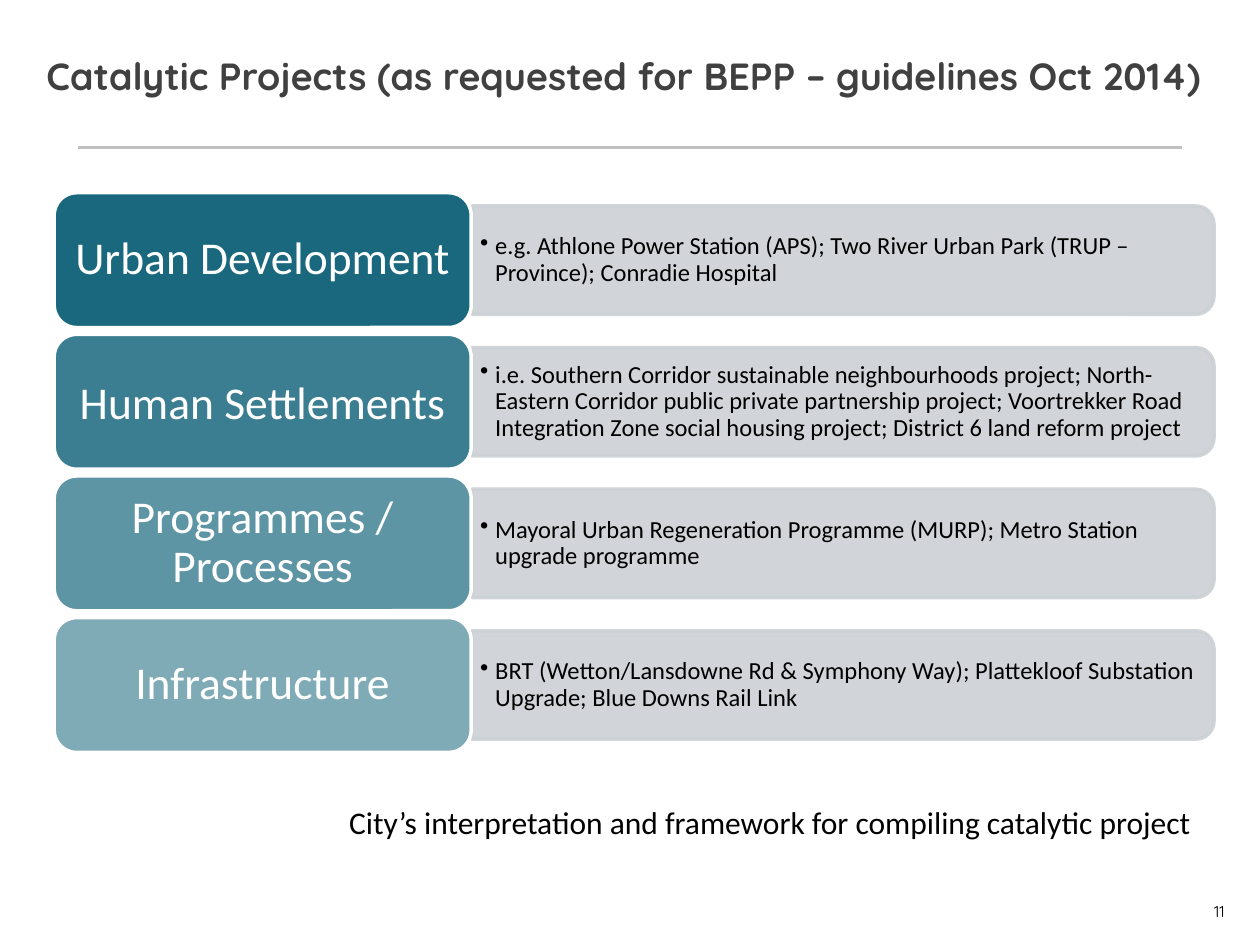
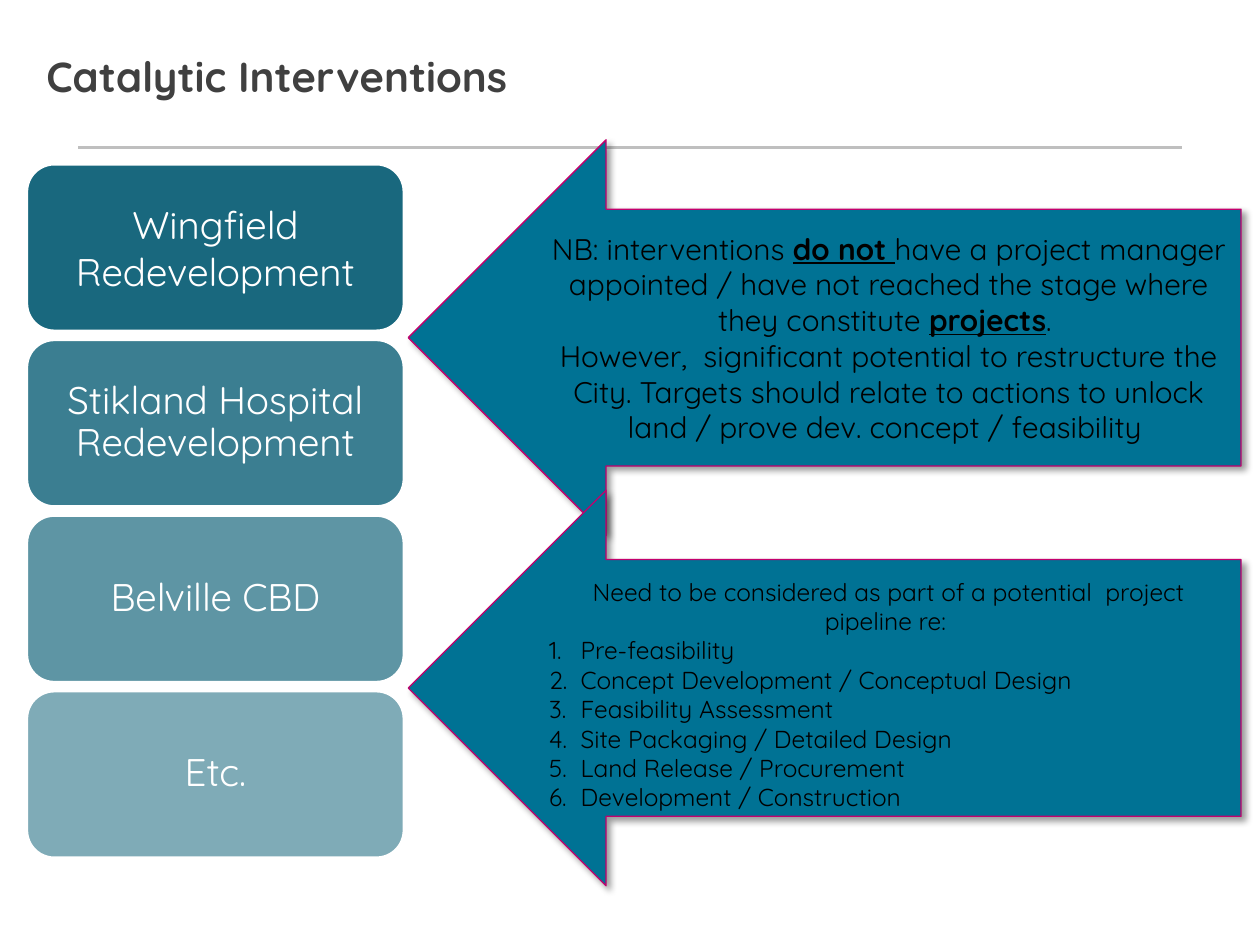
from lxml.etree import SubElement
from pptx import Presentation
from pptx.dml.color import RGBColor
from pptx.enum.shapes import MSO_CONNECTOR, MSO_SHAPE
from pptx.enum.text import MSO_ANCHOR, PP_ALIGN
from pptx.oxml.ns import qn
from pptx.util import Inches, Pt

HEADING_FONT = "Quicksand"
BODY_FONT = "Calibri"
TEAL, ARROW_TEAL, MAGENTA = "005870", "007294", "C4006D"
GREY, RULE_GREY, TITLE_GREY = "CCD1D5", "BFBFBF", "404040"
BLACK, WHITE = "000000", "FFFFFF"
FADES = [90, 77, 63, 50]


def paint(shape, fill, line, width, fill_alpha=100, line_alpha=100):
    """Fill and outline a shape, with opacity in percent."""
    shape.shadow.inherit = False
    shape.fill.solid()
    shape.fill.fore_color.rgb = RGBColor.from_string(fill)
    shape.line.color.rgb = RGBColor.from_string(line)
    shape.line.width = Pt(width)
    colours = shape._element.spPr.iter(qn("a:srgbClr"))
    for colour, alpha in zip(list(colours), (fill_alpha, line_alpha)):
        if alpha < 100:
            SubElement(colour, qn("a:alpha"), val=str(alpha * 1000))


def write(shape, text, font, size, colour, align=PP_ALIGN.CENTER,
          insets=(0.1, 0.05, 0.1, 0.05), spacing=None):
    """Set a shape's text, vertically centred, in one style."""
    frame = shape.text_frame
    frame.text = text
    frame.word_wrap = True
    frame.vertical_anchor = MSO_ANCHOR.MIDDLE
    (frame.margin_left, frame.margin_top,
     frame.margin_right, frame.margin_bottom) = map(Inches, insets)
    for paragraph in frame.paragraphs:
        paragraph.alignment = align
        paragraph.line_spacing = spacing
        for run in paragraph.runs:
            run.font.name = font
            run.font.size = Pt(size)
            run.font.color.rgb = RGBColor.from_string(colour)
    return frame


prs = Presentation()
prs.slide_width, prs.slide_height = Inches(10), Inches(7.5)

# Rule and title on both slides
titles = [
    ("Catalytic Projects (as requested for BEPP – guidelines Oct 2014)", 21.6),
    ("Catalytic Interventions", 24),
]
for title, size in titles:
    slide = prs.slides.add_slide(prs.slide_layouts[6])
    rule = slide.shapes.add_connector(
        MSO_CONNECTOR.STRAIGHT, Inches(0.62), Inches(1.17), Inches(9.38), Inches(1.17))
    rule.line.color.rgb = RGBColor.from_string(RULE_GREY)
    rule.line.width = Pt(2)
    SubElement(rule._element.spPr, qn("a:effectLst"))
    heading = slide.shapes.add_textbox(Inches(0.27), Inches(0.22), Inches(9.64), Inches(0.76))
    frame = write(heading, title, HEADING_FONT, size, TITLE_GREY, PP_ALIGN.LEFT)
    frame.paragraphs[0].runs[0].font.bold = True
projects, interventions = prs.slides

# Slide 1: project categories with their examples
categories = [
    ("Urban Development", 0.9,
     "e.g. Athlone Power Station (APS); Two River Urban Park (TRUP – Province); "
     "Conradie Hospital"),
    ("Human Settlements", 1.0,
     "i.e. Southern Corridor sustainable neighbourhoods project; North-Eastern Corridor "
     "public private partnership project; Voortrekker Road Integration Zone social housing "
     "project; District 6 land reform project"),
    ("Programmes / Processes", 0.9,
     "Mayoral Urban Regeneration Programme (MURP); Metro Station upgrade programme"),
    ("Infrastructure", 0.9,
     "BRT (Wetton/Lansdowne Rd & Symphony Way); Plattekloof Substation Upgrade; "
     "Blue Downs Rail Link"),
]
bar_length, bar_height, row_pitch = 5.89, 0.86, 1.124
for row, ((category, spacing, examples), fade) in enumerate(zip(categories, FADES)):
    top = 1.53 + row * row_pitch
    middle = top + 1.07 / 2

    # Turned a quarter so that its rounded corners face right
    bar = projects.shapes.add_shape(
        MSO_SHAPE.ROUND_2_SAME_RECTANGLE, Inches(6.26), Inches(middle - bar_length / 2),
        Inches(bar_height), Inches(bar_length))
    bar.rotation = 90
    paint(bar, GREY, GREY, 2, 90, 90)

    example_box = projects.shapes.add_textbox(
        Inches(3.75), Inches(middle - 0.385), Inches(5.85), Inches(0.77))
    frame = write(example_box, examples, BODY_FONT, 14, BLACK, PP_ALIGN.LEFT,
                  (0.06, 0.03, 0.06, 0.03), 0.9)
    properties = frame.paragraphs[0]._p.get_or_add_pPr()
    properties.set("marL", str(Inches(0.12)))
    properties.set("indent", str(Inches(-0.12)))
    SubElement(properties, qn("a:buChar"), char="•")

    category_box = projects.shapes.add_shape(
        MSO_SHAPE.ROUNDED_RECTANGLE, Inches(0.43), Inches(top), Inches(3.31), Inches(1.07))
    paint(category_box, TEAL, WHITE, 2, fade)
    write(category_box, category, BODY_FONT, 26, WHITE,
          insets=(0.11, 0.05, 0.11, 0.05), spacing=spacing)

# Slide 1: caption and page number
caption = projects.shapes.add_textbox(Inches(2.55), Inches(6.32), Inches(7.18), Inches(0.4))
write(caption, "City’s interpretation and framework for compiling catalytic project ",
      BODY_FONT, 18, BLACK)
page_number = projects.shapes.add_textbox(Inches(9.16), Inches(7.07), Inches(0.56), Inches(0.25))
write(page_number, "11", HEADING_FONT, 9, BLACK, PP_ALIGN.RIGHT, (0.08, 0.08, 0, 0))

# Slide 2: intervention sites
sites = [("Wingfield Redevelopment", 1.0), ("Stikland Hospital Redevelopment", 0.9),
         ("Belville CBD", 0.9), ("Etc.", 0.9)]
for row, ((site, spacing), fade) in enumerate(zip(sites, FADES)):
    site_box = interventions.shapes.add_shape(
        MSO_SHAPE.ROUNDED_RECTANGLE, Inches(0.21), Inches(1.3 + row * 1.394),
        Inches(3), Inches(1.33))
    paint(site_box, TEAL, WHITE, 2, fade)
    write(site_box, site, HEADING_FONT, 22, WHITE,
          insets=(0.09, 0.05, 0.09, 0.05), spacing=spacing)

# Slide 2: arrows with notes
stages = ["Pre-feasibility", "Concept Development / Conceptual Design",
          "Feasibility Assessment", "Site Packaging / Detailed Design",
          "Land Release / Procurement", "Development / Construction"]
status_parts = [
    "NB: interventions ", "do not ",
    "have a project manager appointed / have not reached the stage where they constitute ",
    "projects", ". "]
potential = ("However,  significant potential to restructure the City. Targets should relate "
             "to actions to unlock land / prove dev. concept / feasibility ")
pipeline = "Need to be considered as part of a potential  project pipeline re: "
notes = [
    (1.11, "\n".join(["", potential]), 17, (0.1, 0.05, 0.1, 0.05)),
    (3.89, "\n".join([pipeline] + stages), 14, (0.1, 0.1, 0.1, 0)),
]
note_frames = []
for top, note, size, insets in notes:
    arrow = interventions.shapes.add_shape(
        MSO_SHAPE.LEFT_ARROW, Inches(3.24), Inches(top), Inches(6.61), Inches(3.14))
    arrow.adjustments[0], arrow.adjustments[1] = 0.649, 0.5
    paint(arrow, ARROW_TEAL, MAGENTA, 0.75)
    effects = arrow._element.spPr.find(qn("a:effectLst"))
    shadow = SubElement(effects, qn("a:outerShdw"), blurRad=str(Pt(4)), dist=str(Pt(3)),
                        dir=str(45 * 60000), algn="tl", rotWithShape="0")
    shadow_colour = SubElement(shadow, qn("a:srgbClr"), val=BLACK)
    SubElement(shadow_colour, qn("a:alpha"), val="40000")
    note_frames.append(write(arrow, note, HEADING_FONT, size, BLACK, insets=insets))
status_frame, pipeline_frame = note_frames

# Emphasised words in the upper note
for part in status_parts:
    run = status_frame.paragraphs[0].add_run()
    run.text = part
    run.font.name = HEADING_FONT
    run.font.size = Pt(17)
    run.font.color.rgb = RGBColor.from_string(BLACK)
    run.font.bold = run.font.underline = part in ("do not ", "projects")

# Numbered stages in the lower note
for paragraph in pipeline_frame.paragraphs[1:]:
    paragraph.alignment = PP_ALIGN.LEFT
    properties = paragraph._p.get_or_add_pPr()
    properties.set("marL", str(Inches(0.25)))
    properties.set("indent", str(Inches(-0.25)))
    SubElement(properties, qn("a:buFont"), typeface="+mj-lt")
    SubElement(properties, qn("a:buAutoNum"), type="arabicPeriod")

prs.save("out.pptx")
